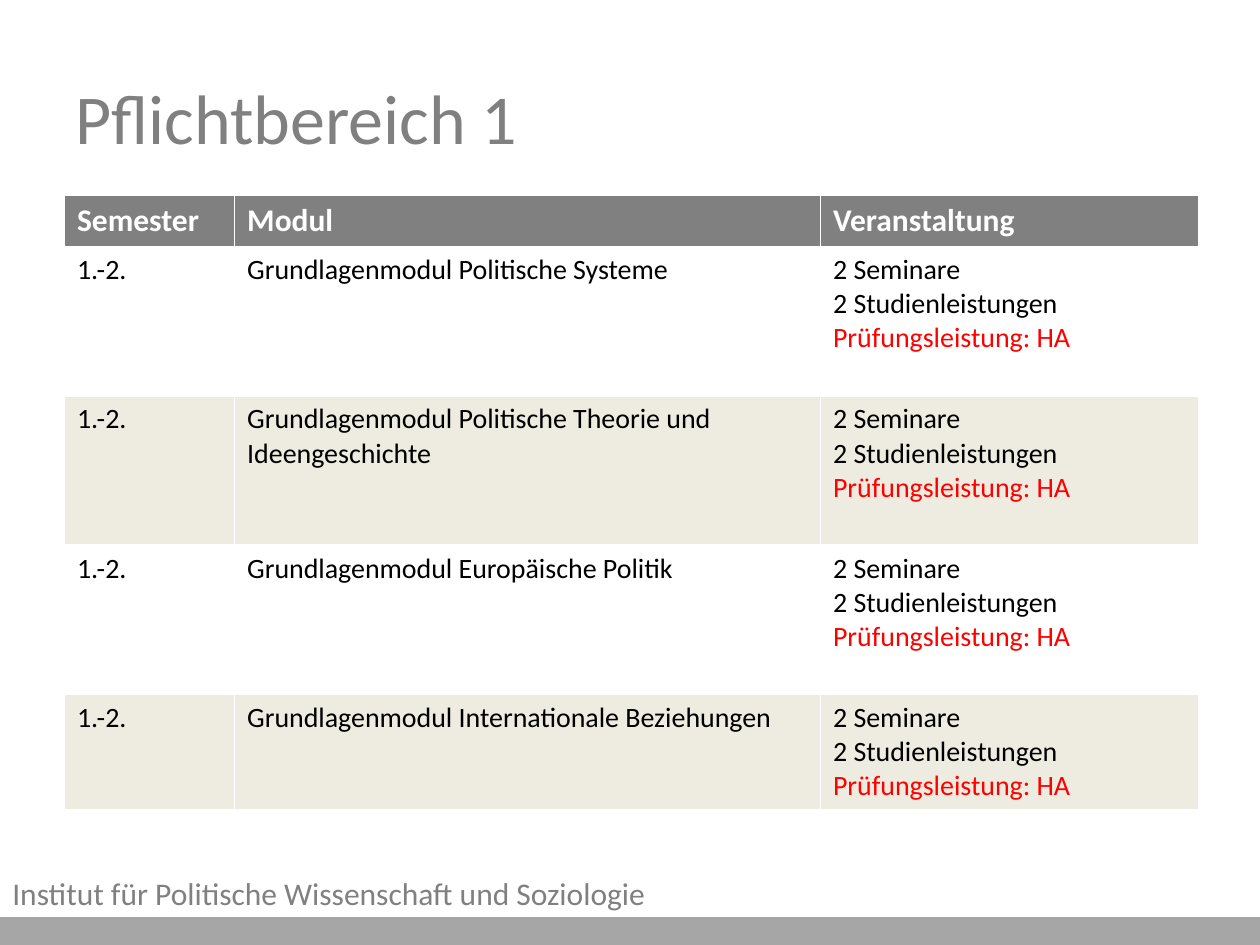
from dataclasses import dataclass

from pptx import Presentation
from pptx.dml.color import RGBColor
from pptx.enum.shapes import MSO_SHAPE
from pptx.enum.text import MSO_ANCHOR
from pptx.util import Cm, Pt

TITLE = "Pflichtbereich 1"
INSTITUTE = "Institut für Politische Wissenschaft und Soziologie"
HEADINGS = ["Semester", "Modul", "Veranstaltung"]
SEMESTER = "1.-2."
MODULES = [
    "Grundlagenmodul Politische Systeme",
    "Grundlagenmodul Politische Theorie und Ideengeschichte",
    "Grundlagenmodul Europäische Politik",
    "Grundlagenmodul Internationale Beziehungen",
]
COURSES = ["2 Seminare", "2 Studienleistungen"]
EXAM = "Prüfungsleistung: HA"

SLIDE_WIDTH, SLIDE_HEIGHT = 25.4, 19.05
BAR_HEIGHT = 0.53
COLUMN_WIDTHS = [3.43, 11.81, 7.62]
ROW_HEIGHTS = [1.03, 3.01, 3.01, 3.01, 2.32]


@dataclass(frozen=True)
class Theme:
    font: str = "Calibri"
    grey: RGBColor = RGBColor(0x80, 0x80, 0x80)
    bar: RGBColor = RGBColor(0xA6, 0xA6, 0xA6)
    band: RGBColor = RGBColor(0xEE, 0xEC, 0xE1)
    white: RGBColor = RGBColor(0xFF, 0xFF, 0xFF)
    black: RGBColor = RGBColor(0, 0, 0)
    red: RGBColor = RGBColor(0xFF, 0, 0)
    title_size: int = 40
    label_size: int = 18
    body_size: int = 16


THEME = Theme()


def write(frame, *lines, size=THEME.body_size, color=THEME.black, bold=False, last_color=None):
    """Fill a text frame with one paragraph per line."""
    frame.word_wrap = True
    for index, line in enumerate(lines):
        paragraph = frame.add_paragraph() if index else frame.paragraphs[0]
        run = paragraph.add_run()
        run.text = line
        run.font.name = THEME.font
        run.font.size = Pt(size)
        run.font.bold = bold
        is_last = index == len(lines) - 1
        run.font.color.rgb = last_color if last_color and is_last else color


def add_footer(slide):
    """Draw the bottom bar and the institute line above it."""
    bar = slide.shapes.add_shape(
        MSO_SHAPE.RECTANGLE, 0, Cm(SLIDE_HEIGHT - BAR_HEIGHT), Cm(SLIDE_WIDTH), Cm(BAR_HEIGHT))
    bar.shadow.inherit = False
    bar.fill.solid()
    bar.fill.fore_color.rgb = THEME.bar
    bar.line.color.rgb = THEME.bar
    bar.line.width = Pt(2)
    institute = slide.shapes.add_textbox(0, Cm(17.5), Cm(18), Cm(1.02))
    write(institute.text_frame, INSTITUTE, size=THEME.label_size, color=THEME.grey)


def add_title(slide):
    """Place the slide title."""
    title = slide.shapes.add_textbox(Cm(1.27), Cm(0.76), Cm(22.86), Cm(3.18))
    title.text_frame.vertical_anchor = MSO_ANCHOR.MIDDLE
    write(title.text_frame, TITLE, size=THEME.title_size, color=THEME.grey)


def add_modules(slide):
    """Build the module table with alternating bands."""
    modules = slide.shapes.add_table(
        len(ROW_HEIGHTS), len(COLUMN_WIDTHS), Cm(1.3), Cm(3.94),
        Cm(sum(COLUMN_WIDTHS)), Cm(sum(ROW_HEIGHTS))).table
    modules.horz_banding = False
    for column, width in zip(modules.columns, COLUMN_WIDTHS):
        column.width = Cm(width)
    for row, height in zip(modules.rows, ROW_HEIGHTS):
        row.height = Cm(height)
    for column, heading in enumerate(HEADINGS):
        cell = modules.cell(0, column)
        cell.fill.solid()
        cell.fill.fore_color.rgb = THEME.grey
        write(cell.text_frame, heading, size=THEME.label_size, color=THEME.white, bold=True)
    for row, module in enumerate(MODULES, start=1):
        for column, lines in enumerate([[SEMESTER], [module], [*COURSES, EXAM]]):
            cell = modules.cell(row, column)
            if row % 2:
                cell.fill.background()
            else:
                cell.fill.solid()
                cell.fill.fore_color.rgb = THEME.band
            write(cell.text_frame, *lines, last_color=THEME.red if EXAM in lines else None)


def main():
    """Build and save the slide."""
    deck = Presentation()
    deck.slide_width, deck.slide_height = Cm(SLIDE_WIDTH), Cm(SLIDE_HEIGHT)
    slide = deck.slides.add_slide(deck.slide_layouts[6])
    add_footer(slide)
    add_title(slide)
    add_modules(slide)
    deck.save("out.pptx")


if __name__ == "__main__":
    main()
